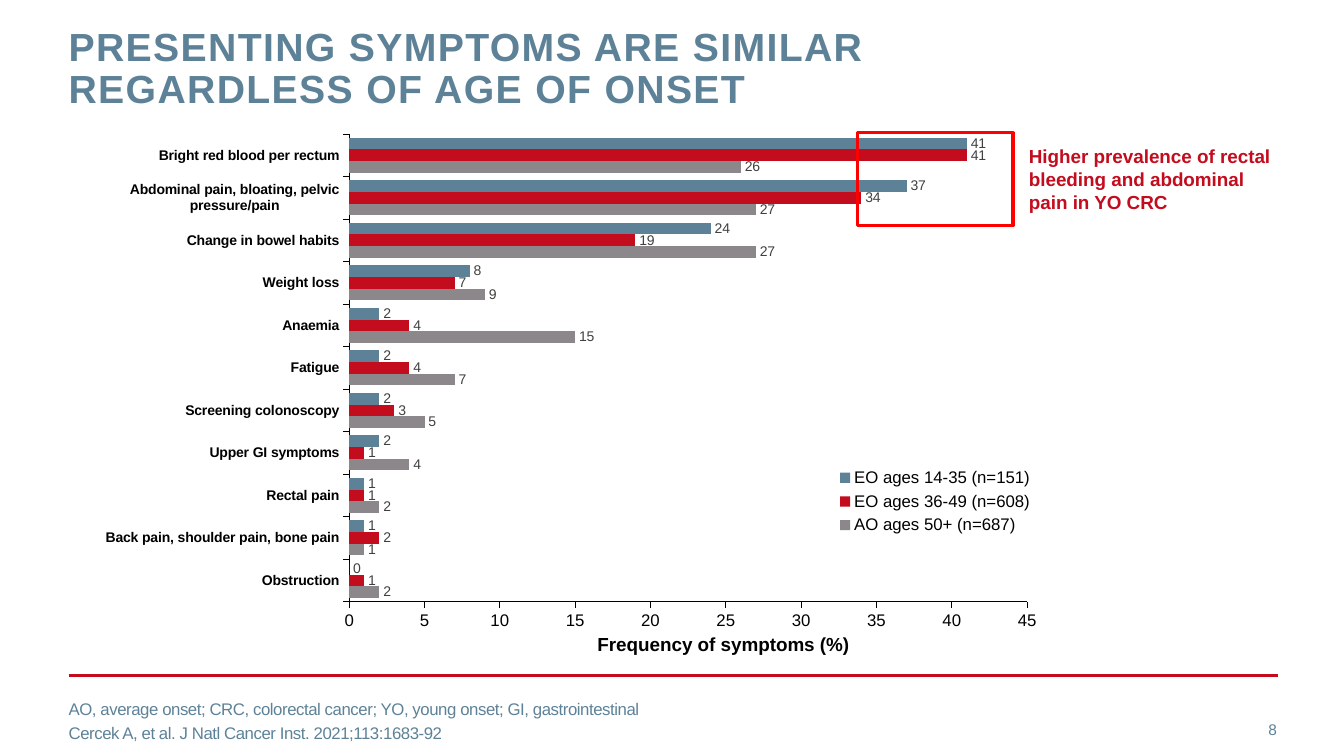
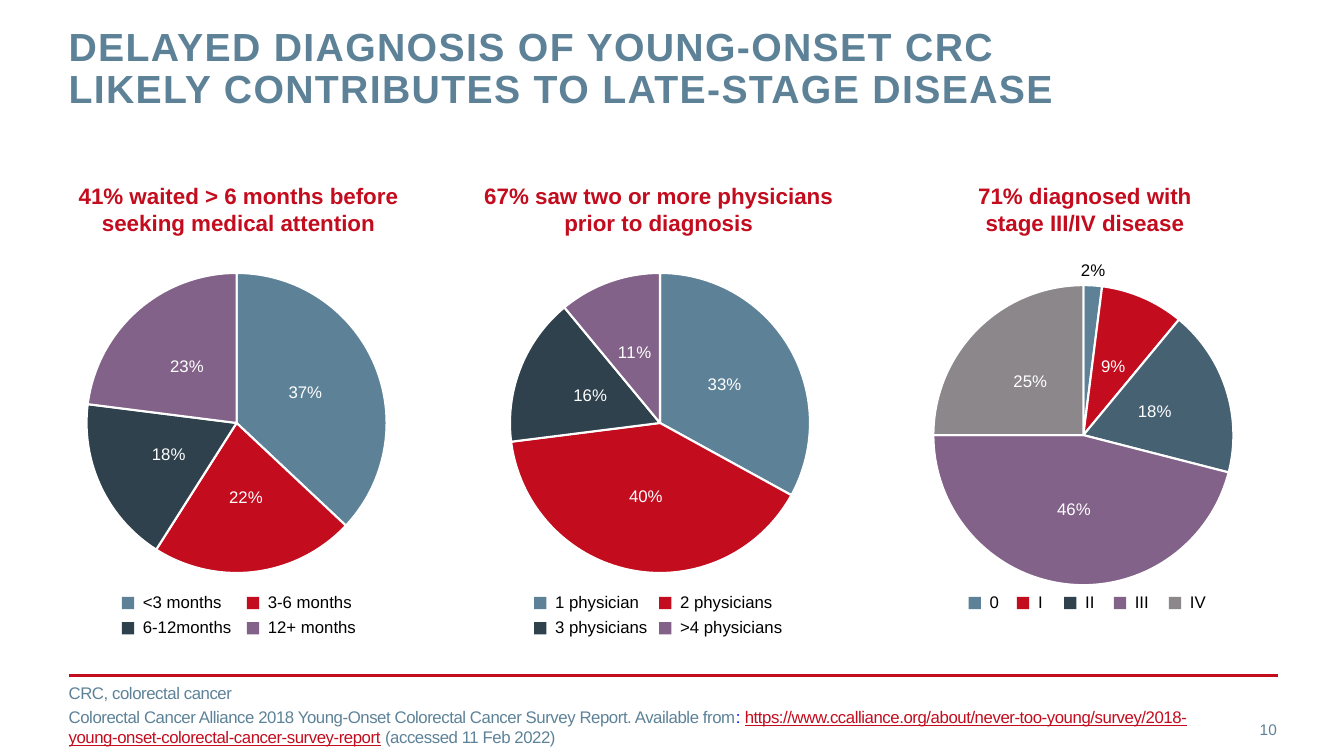
from dataclasses import dataclass, replace

from lxml.etree import SubElement
from pptx import Presentation
from pptx.chart.data import CategoryChartData
from pptx.dml.color import RGBColor
from pptx.enum.chart import (XL_CHART_TYPE as ChartType, XL_LABEL_POSITION as LabelAt,
                             XL_LEGEND_POSITION as LegendAt, XL_TICK_MARK as Tick)
from pptx.enum.shapes import MSO_CONNECTOR as Connector, MSO_SHAPE as Shape
from pptx.enum.text import MSO_ANCHOR as Anchor, MSO_AUTO_SIZE as AutoSize, PP_ALIGN as Align
from pptx.oxml import parse_xml
from pptx.oxml.ns import qn
from pptx.util import Cm, Pt


# Theme: colours, type sizes and text styles
@dataclass(frozen=True)
class Style:
    size: float
    color: str
    bold: bool = False
    spacing: int = 0  # hundredths of a point
    underline: bool = False


@dataclass(frozen=True)
class Theme:
    font: str = "Arial"
    steel: str = "5D8298"
    red: str = "C30C1E"
    grey: str = "8B878B"
    navy: str = "2E414C"
    slate: str = "466172"
    plum: str = "826288"
    black: str = "000000"
    white: str = "FFFFFF"
    frame: str = "FF0000"
    title: Style = Style(28, steel, True, 100)
    note: Style = Style(12, steel, spacing=-30)
    number: Style = Style(11, steel)
    heading: Style = Style(16, red, True)
    callout: Style = Style(13.5, red, True)
    axis_title: Style = Style(13.5, black, True)
    category: Style = Style(10, black, True)
    value_label: Style = Style(10, "404040")
    slice_label: Style = Style(12, white)
    label: Style = Style(12, black)


THEME = Theme()
MARGIN = 1.73
RIGHT_EDGE = 32.21


# Text
def rgb(color):
    return RGBColor.from_string(color)


def set_font(font, style):
    font.name = THEME.font
    font.size = Pt(style.size)
    font.bold = style.bold
    font.color.rgb = rgb(style.color)


def add_spans(para, spans):
    for text, style in spans:
        span = para.add_run()
        span.text = text
        set_font(span.font, style)
        span.font.underline = style.underline
        if style.spacing:
            span.font._element.set("spc", str(style.spacing))


def fill_text(box, paras, align=Align.LEFT, anchor=Anchor.TOP, inset=True,
              wrap=True, before=0, spacing=None):
    """Write paras, each a list of (text, style) spans, into a box."""
    frame = box.text_frame
    frame.word_wrap = wrap
    frame.auto_size = AutoSize.NONE
    frame.vertical_anchor = anchor
    if not inset:
        frame.margin_left = frame.margin_right = 0
        frame.margin_top = frame.margin_bottom = 0
    for index, spans in enumerate(paras):
        para = frame.add_paragraph() if index else frame.paragraphs[0]
        if box.is_placeholder:
            props = para._p.get_or_add_pPr()
            props.set("marL", "0")
            props.set("indent", "0")
            SubElement(props, qn("a:buNone"))
        para.alignment = align
        para.space_before = Pt(before if index else 0)
        if spacing:
            para.line_spacing = Pt(spacing)
        add_spans(para, spans)


def add_text(page, left, top, width, height, paras, **options):
    box = page.shapes.add_textbox(Cm(left), Cm(top), Cm(width), Cm(height))
    fill_text(box, paras, **options)


def place(shape, left, top, width, height):
    shape.left, shape.top = Cm(left), Cm(top)
    shape.width, shape.height = Cm(width), Cm(height)


# Shapes
def add_rect(page, left, top, width, height, fill=None, line=None):
    rect = page.shapes.add_shape(Shape.RECTANGLE, Cm(left), Cm(top), Cm(width), Cm(height))
    rect.shadow.inherit = False
    if fill:
        rect.fill.solid()
        rect.fill.fore_color.rgb = rgb(fill)
    else:
        rect.fill.background()
    if line:
        rect.line.color.rgb = rgb(line)
        rect.line.width = Pt(2.25)
    else:
        rect.line.fill.background()


def add_rule(page, top):
    rule = page.shapes.add_connector(Connector.STRAIGHT, Cm(MARGIN), Cm(top),
                                     Cm(RIGHT_EDGE), Cm(top))
    rule.line.color.rgb = rgb(THEME.red)
    rule.line.width = Pt(2)
    SubElement(rule._element.spPr, qn("a:effectLst"))


# Shared page frame
def add_page(deck, title, notes, notes_top, number):
    page = deck.slides.add_slide(deck.slide_layouts[1])
    add_rule(page, 17.02)
    heading, body = page.placeholders
    place(heading, MARGIN, 0.69, 25.1, 2.24)
    fill_text(heading, [[(title, THEME.title)]], inset=False, spacing=30)
    place(body, MARGIN, notes_top, 28.27, 1.02)
    fill_text(body, notes, anchor=Anchor.MIDDLE, inset=False, before=3)
    add_text(page, 30, 17.86, 2.18, 1.02, [[(number, THEME.number)]],
             align=Align.RIGHT, anchor=Anchor.MIDDLE, inset=False)
    return page


# Charts
def set_layout(parent, index, left, top, width, height, inner=False):
    """Fix the place of a chart part, in fractions of the chart."""
    for old in parent.findall(qn("c:layout")):
        parent.remove(old)
    target = '<c:layoutTarget val="inner"/>' if inner else ""
    sizes = "".join(f'<c:{tag} val="{size}"/>' for tag, size in
                    zip("xywh", (left, top, width, height)))
    parent.insert(index, parse_xml(
        '<c:layout xmlns:c="http://schemas.openxmlformats.org/drawingml/2006/chart">'
        f'<c:manualLayout>{target}<c:xMode val="edge"/><c:yMode val="edge"/>'
        f'{sizes}</c:manualLayout></c:layout>'))


def add_chart(page, kind, at, categories, series, number_format, plot_area):
    data = CategoryChartData(number_format=number_format)
    data.categories = categories
    for name, values in series:
        data.add_series(name, values)
    chart = page.shapes.add_chart(kind, *map(Cm, at), data).chart
    chart.has_title = False
    chart.has_legend = False
    set_font(chart.font, THEME.label)
    set_layout(chart._chartSpace.chart.plotArea, 0, *plot_area, inner=True)
    return chart


def show_values(owner, style, position, number_format):
    labels = owner.data_labels
    labels.show_value = True
    labels.number_format = number_format
    labels.number_format_is_linked = False
    labels.position = position
    set_font(labels.font, style)


def format_axis(axis, style):
    axis.has_major_gridlines = False
    axis.major_tick_mark = Tick.OUTSIDE
    axis.minor_tick_mark = Tick.NONE
    axis.format.line.color.rgb = rgb(THEME.black)
    axis.format.line.width = Pt(0.75)
    set_font(axis.tick_labels.font, style)


def add_bars(page, categories, groups):
    chart = add_chart(page, ChartType.BAR_CLUSTERED, (2.21, 3.12, 24.41, 12.95), categories,
                      [(name, values) for name, values, _ in groups], "0",
                      (0.27, 0.02, 0.7, 0.91))
    plot = chart.plots[0]
    plot.gap_width, plot.overlap, plot.vary_by_categories = 64, 0, False
    for series, (_, _, color) in zip(plot.series, groups):
        series.format.fill.solid()
        series.format.fill.fore_color.rgb = rgb(color)
        show_values(series, THEME.value_label, LabelAt.OUTSIDE_END, "0")
    format_axis(chart.category_axis, THEME.category)
    format_axis(chart.value_axis, THEME.label)
    chart.value_axis.minimum_scale = 0
    chart.value_axis.maximum_scale = 45
    chart.value_axis.major_unit = 5
    chart.has_legend = True
    chart.legend.position = LegendAt.RIGHT
    chart.legend.include_in_layout = True
    set_font(chart.legend.font, THEME.label)
    set_layout(chart.legend._element, 1, 0.77, 0.66, 0.21, 0.15)


def add_pie(page, left, top_share, values, colors, outside=()):
    percent = '0"%"'
    chart = add_chart(page, ChartType.PIE, (left, 5.54, 8.31, 10.24),
                      [str(n + 1) for n in range(len(values))], [("Series 1", values)],
                      percent, (0.04, top_share, 0.91, 0.74))
    chart.plots[0].vary_by_categories = True
    series = chart.plots[0].series[0]
    show_values(series, THEME.slice_label, LabelAt.CENTER, percent)
    for index, color in enumerate(colors):
        look = series.points[index].format
        look.fill.solid()
        look.fill.fore_color.rgb = rgb(color)
        look.line.color.rgb = rgb(THEME.white)
        look.line.width = Pt(1.5)
    for index in outside:
        label = series.points[index].data_label
        set_font(label.font, THEME.label)
        label.position = LabelAt.OUTSIDE_END


def add_key(page, names, colors, columns):
    """Draw colour keys row by row under a pie."""
    for index, (name, color) in enumerate(zip(names, colors)):
        row, column = divmod(index, len(columns))
        left, top = columns[column], 15.04 + 0.64 * row
        add_rect(page, left, top, 0.31, 0.31, fill=color)
        add_text(page, left + 0.53, top - 0.13, 2.6, 0.51, [[(name, THEME.label)]],
                 inset=False, wrap=False)


# Pages
def add_symptoms_page(deck):
    notes = ["AO, average onset; CRC, colorectal cancer; YO, young onset; GI, gastrointestinal",
             "Cercek A, et al. J Natl Cancer Inst. 2021;113:1683-92"]
    page = add_page(deck, "PRESENTING SYMPTOMS ARE SIMILAR REGARDLESS OF AGE OF ONSET",
                    [[(note, THEME.note)] for note in notes], 17.65, "8")
    categories = ["Obstruction", "Back pain, shoulder pain, bone pain", "Rectal pain",
                  "Upper GI symptoms", "Screening colonoscopy", "Fatigue", "Anaemia",
                  "Weight loss", "Change in bowel habits",
                  "Abdominal pain, bloating, pelvic pressure/pain",
                  "Bright red blood per rectum"]
    add_bars(page, categories, [
        ("AO ages 50+ (n=687)", (2, 1, 2, 4, 5, 7, 15, 9, 27, 27, 26), THEME.grey),
        ("EO ages 36-49 (n=608)", (1, 2, 1, 1, 3, 4, 4, 7, 19, 34, 41), THEME.red),
        ("EO ages 14-35 (n=151)", (0, 1, 1, 2, 2, 2, 2, 8, 24, 37, 41), THEME.steel)])
    add_rect(page, 21.62, 3.35, 3.91, 2.34, line=THEME.frame)
    add_text(page, 25.68, 3.53, 7.01, 1.98, [[(
        "Higher prevalence of rectal bleeding and abdominal pain in YO CRC", THEME.callout)]])
    add_text(page, 13.72, 15.82, 9.02, 0.84,
             [[("Frequency of symptoms (%)", THEME.axis_title)]], align=Align.CENTER)


def add_diagnosis_page(deck):
    note = THEME.note
    link = replace(note, color=THEME.red, underline=True)
    source = [
        ("Colorectal Cancer Alliance 2018 Young-Onset Colorectal Cancer Survey Report. "
         "Available from", note),
        (": ", replace(note, color="0000FF")),
        ("https://www.ccalliance.org/about/never-too-young/survey/"
         "2018-young-onset-colorectal-cancer-survey-report", link),
        (" (accessed 11 Feb 2022)", note)]
    page = add_page(deck, "DELAYED DIAGNOSIS OF YOUNG-ONSET CRC LIKELY CONTRIBUTES TO "
                    "LATE-STAGE DISEASE", [[("CRC, colorectal cancer", note)], source],
                    17.5, "10")
    four = (THEME.steel, THEME.red, THEME.navy, THEME.plum)
    stages = (THEME.steel, THEME.red, THEME.slate, THEME.plum, THEME.grey)
    # heading lines, heading centre, pie top share, values, slice colours, outside labels
    pies = [
        (("41% waited > 6 months before", "seeking medical attention"), 6.01, 0.13,
         (37, 22, 18, 23), four, ()),
        (("67% saw two or more physicians", "prior to diagnosis"), 16.6, 0.13,
         (33, 40, 16, 11), four, ()),
        (("71% diagnosed with", "stage III/IV disease"), 27.34, 0.16,
         (2, 9, 18, 46, 25), stages, (0,))]
    for index, (lines, centre, top_share, values, colors, outside) in enumerate(pies):
        add_pie(page, 1.85 + 10.67 * index, top_share, values, colors, outside)
        add_text(page, centre - 5, 4.47, 10, 1.63,
                 [[(line, THEME.heading)] for line in lines], align=Align.CENTER)
    add_key(page, ("<3 months", "3-6 months", "6-12months", "12+ months"), four, (3.07, 6.22))
    add_key(page, ("1 physician", "2 physicians", "3 physicians", ">4 physicians"), four,
            (13.46, 16.61))
    add_key(page, ("0", "I", "II", "III", "IV"), four + (THEME.grey,),
            (24.41, 25.63, 26.82, 28.07, 29.46))


def main():
    deck = Presentation()
    deck.slide_width, deck.slide_height = Cm(33.87), Cm(19.05)
    add_symptoms_page(deck)
    add_diagnosis_page(deck)
    deck.save("out.pptx")


if __name__ == "__main__":
    main()
